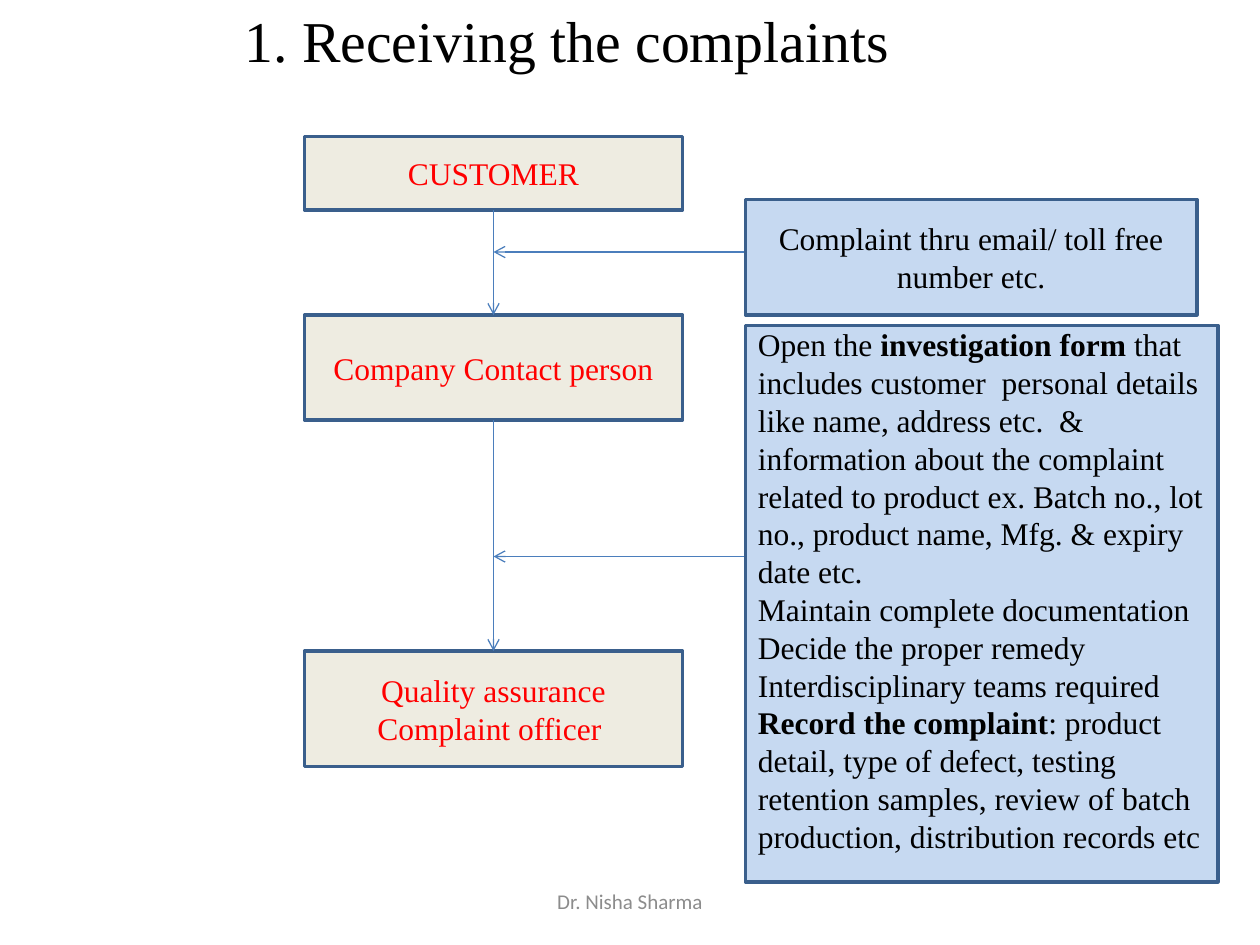
from pptx import Presentation
from pptx.dml.color import RGBColor
from pptx.enum.shapes import MSO_CONNECTOR, MSO_SHAPE
from pptx.enum.text import MSO_ANCHOR, MSO_AUTO_SIZE, PP_ALIGN
from pptx.oxml.ns import qn
from pptx.util import Pt
from lxml.etree import SubElement

BLACK = RGBColor(0x00, 0x00, 0x00)
RED = RGBColor(0xFF, 0x00, 0x00)
GRAY = RGBColor(0x8C, 0x8C, 0x8C)
CREAM = RGBColor(0xEE, 0xEC, 0xE1)
SKY = RGBColor(0xC6, 0xD9, 0xF1)
EDGE = RGBColor(0x3A, 0x5F, 0x8C)
BLUE = RGBColor(0x4B, 0x7E, 0xBC)
SERIF = "Times New Roman"


class Chart:
    """Style and drawing methods for one slide."""

    def __init__(self, slide):
        self.slide = slide

    def fill_text(self, shape, paras, size=18, color=BLACK, font=SERIF,
                  align=PP_ALIGN.CENTER, anchor=MSO_ANCHOR.MIDDLE):
        """Each paragraph is a list of (text, bold) runs."""
        frame = shape.text_frame
        frame.word_wrap = True
        frame.auto_size = MSO_AUTO_SIZE.NONE
        frame.vertical_anchor = anchor
        for i, runs in enumerate(paras):
            para = frame.add_paragraph() if i else frame.paragraphs[0]
            para.alignment = align
            for text, bold in runs:
                run = para.add_run()
                run.text = text
                run.font.name = font
                run.font.size = Pt(size)
                run.font.bold = bold
                run.font.color.rgb = color
        return frame

    def title(self, text, x, y, w, h):
        shape = self.slide.shapes.title
        shape.left, shape.top, shape.width, shape.height = map(Pt, (x, y, w, h))
        self.fill_text(shape, [[(text, False)]], size=33)

    def box(self, x, y, w, h, fill, paras, **style):
        shape = self.slide.shapes.add_shape(
            MSO_SHAPE.RECTANGLE, *map(Pt, (x, y, w, h)))
        shape.shadow.inherit = False
        shape.fill.solid()
        shape.fill.fore_color.rgb = fill
        shape.line.color.rgb = EDGE
        shape.line.width = Pt(2)
        return self.fill_text(shape, paras, **style)

    def arrow(self, x1, y1, x2, y2):
        line = self.slide.shapes.add_connector(
            MSO_CONNECTOR.STRAIGHT, *map(Pt, (x1, y1, x2, y2)))
        line.line.color.rgb = BLUE
        line.line.width = Pt(0.75)
        SubElement(line.get_or_add_ln(), qn("a:tailEnd"), type="arrow")
        SubElement(line.element.spPr, qn("a:effectLst"))

    def label(self, text, x, y, w, h, **style):
        shape = self.slide.shapes.add_textbox(*map(Pt, (x, y, w, h)))
        self.fill_text(shape, [[(text, False)]], **style)


def main():
    deck = Presentation()
    deck.slide_width, deck.slide_height = Pt(720), Pt(540)
    chart = Chart(deck.slides.add_slide(deck.slide_layouts[5]))
    chart.title("1. Receiving the complaints", 0, 0, 648, 45)

    # Main flow: steps joined from top to bottom
    left, wide, side = 174, 216, 426
    mid = left + wide / 2
    steps = [
        ("CUSTOMER", 78, 42),
        ("Company Contact person", 180, 60),
        ("Quality assurance Complaint officer ", 372, 66),
    ]
    for text, top, high in steps:
        chart.box(left, top, wide, high, CREAM, [[(text, False)]], color=RED)
    for (_, top, high), (_, below, _) in zip(steps, steps[1:]):
        chart.arrow(mid, top + high, mid, below)

    # Side notes pointing at the flow
    for y in (144, 318):
        chart.arrow(side, y, mid, y)
    chart.box(side, 114, 258, 66, SKY,
              [[("Complaint thru email/ toll free number etc.", False)]])
    notes = [
        [("Open the ", False), ("investigation form ", True),
         ("that includes customer  personal details like name, address etc.  "
          "& information about the complaint related to product ex. Batch "
          "no., lot no., product name, Mfg. & expiry date etc.", False)],
        [("Maintain complete documentation", False)],
        [("Decide the proper remedy", False)],
        [("Interdisciplinary teams required", False)],
        [("Record the complaint", True),
         (": product detail, type of defect, testing retention samples, "
          "review of batch production, distribution records etc", False)],
    ]
    frame = chart.box(side, 186, 270, 318, SKY, notes,
                      align=PP_ALIGN.LEFT, anchor=MSO_ANCHOR.TOP)
    frame.margin_top = 0

    # Footer
    chart.label("Dr. Nisha Sharma", 246, 500.5, 228, 28.75,
                size=12, color=GRAY, font="Calibri")
    deck.save("out.pptx")


if __name__ == "__main__":
    main()
